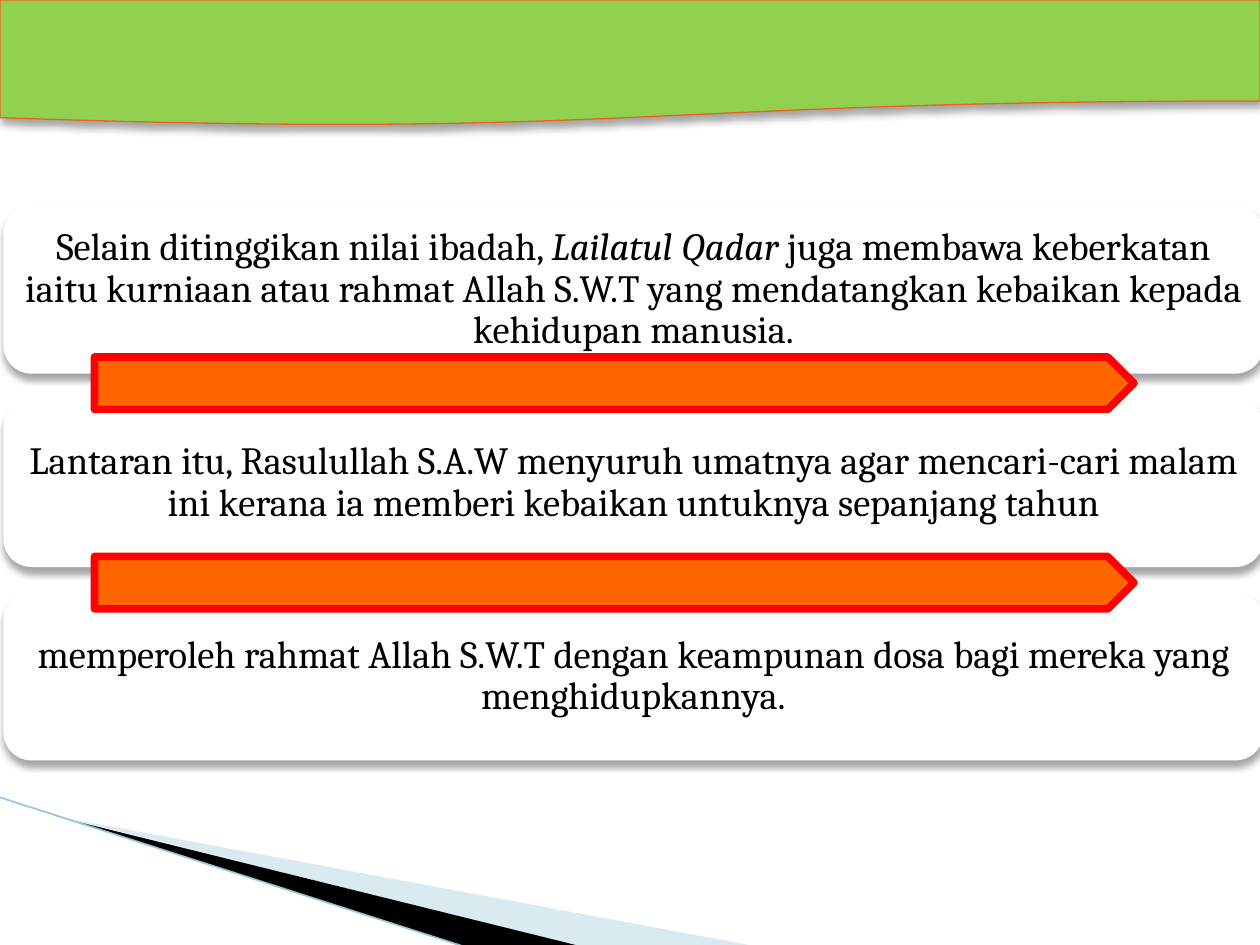
import pptx
import pptx.util
import pptx.oxml
import pptx.oxml.ns
import pptx.dml.color
import pptx.enum.shapes
import pptx.enum.text

Pt = pptx.util.Pt
RGB = pptx.dml.color.RGBColor
SHAPE = pptx.enum.shapes.MSO_SHAPE
NS = pptx.oxml.ns.nsdecls("a")

WHITE = RGB(0xFF, 0xFF, 0xFF)
BLACK = RGB(0, 0, 0)
PALE_BLUE = RGB(0xA0, 0xCB, 0xDC)
EDGE_BLUE = RGB(0x97, 0xC5, 0xD8)
GREEN = RGB(0x92, 0xD0, 0x50)
RUST = RGB(0xEB, 0x64, 0x1B)
ORANGE = RGB(0xFF, 0x66, 0x00)
RED = RGB(0xFF, 0, 0)

CARD_TOP, CARD_STEP = 117.5, 110.5
ARROW_TOPS = (204, 318)
CARDS = [
    [("Selain ditinggikan nilai ibadah, ", False), ("Lailatul Qadar", True),
     (" juga membawa keberkatan iaitu kurniaan atau rahmat Allah S.W.T yang "
      "mendatangkan kebaikan kepada kehidupan manusia.", False)],
    [("Lantaran itu, Rasulullah S.A.W menyuruh umatnya agar mencari-cari malam "
      "ini kerana ia memberi kebaikan untuknya sepanjang tahun", False)],
    [("memperoleh rahmat Allah S.W.T dengan keampunan dosa bagi mereka yang "
      "menghidupkannya.", False)],
]


class Deck:
    font, size = "Cambria", 22

    def __init__(self, width, height):
        self.prs = pptx.Presentation()
        self.prs.slide_width, self.prs.slide_height = Pt(width), Pt(height)
        self.s = self.prs.slides.add_slide(self.prs.slide_layouts[6])

    def shape(self, kind, box, fill, line=None, width=0.75, shadow=False):
        sp = self.s.shapes.add_shape(kind, *map(Pt, box))
        sp.shadow.inherit = False
        sp.fill.solid()
        sp.fill.fore_color.rgb = fill
        if line is None:
            sp.line.fill.background()
        else:
            sp.line.color.rgb = line
            sp.line.width = Pt(width)
        if shadow:
            self.drop_shadow(sp)
        return sp

    def drop_shadow(self, sp):
        effects = sp._element.spPr.find(pptx.oxml.ns.qn("a:effectLst"))
        effects.append(pptx.oxml.parse_xml(
            f'<a:outerShdw {NS} blurRad="{Pt(4)}" dist="{Pt(3)}" dir="5400000" '
            'rotWithShape="0"><a:srgbClr val="000000"><a:alpha val="35000"/>'
            '</a:srgbClr></a:outerShdw>'))

    def card(self, box, runs):
        """Draw a white rounded card; runs are (text, italic) pairs."""
        sp = self.shape(SHAPE.ROUNDED_RECTANGLE, box, WHITE, shadow=True)
        tf = sp.text_frame
        tf.word_wrap = True
        tf.vertical_anchor = pptx.enum.text.MSO_ANCHOR.MIDDLE
        tf.margin_left = tf.margin_right = Pt(6.5)
        tf.margin_top = tf.margin_bottom = Pt(6.5)
        p = tf.paragraphs[0]
        p.alignment = pptx.enum.text.PP_ALIGN.CENTER
        p.line_spacing = 0.9
        for text, italic in runs:
            r = p.add_run()
            r.text = text
            r.font.name, r.font.size = self.font, Pt(self.size)
            r.font.color.rgb = BLACK
            r.font.italic = italic

    def wedge(self, points, fill, opacity=100):
        builder = self.s.shapes.build_freeform(*points[0], scale=Pt(1))
        builder.add_line_segments(points[1:], close=True)
        sp = builder.convert_to_shape()
        sp.shadow.inherit = False
        sp.fill.solid()
        sp.fill.fore_color.rgb = fill
        sp.line.fill.background()
        if opacity < 100:
            color = sp._element.spPr.find(".//" + pptx.oxml.ns.qn("a:srgbClr"))
            color.append(pptx.oxml.parse_xml(
                f'<a:alpha {NS} val="{opacity * 1000}"/>'))

    def line(self, x1, y1, x2, y2, color, width):
        c = self.s.shapes.add_connector(
            pptx.enum.shapes.MSO_CONNECTOR.STRAIGHT, *map(Pt, (x1, y1, x2, y2)))
        c.line.color.rgb = color
        c.line.width = Pt(width)
        c._element.spPr.append(pptx.oxml.parse_xml(f"<a:effectLst {NS}/>"))


def main():
    deck = Deck(720, 540)
    deck.wedge([(39.5, 468.5), (428.5, 540.5), (328.5, 540.5), (39.5, 468)],
               PALE_BLUE, opacity=40)
    deck.wedge([(38, 467.5), (329, 540.5), (268, 541.5), (39, 468)], BLACK)
    deck.line(-0.5, 455.5, 267, 541.5, EDGE_BLUE, 0.95)

    for i, runs in enumerate(CARDS):
        deck.card((2, CARD_TOP + i * CARD_STEP, 720, 96), runs)

    deck.shape(SHAPE.FLOWCHART_DOCUMENT, (0, 0, 720, 72), GREEN, RUST, shadow=True)
    for top in ARROW_TOPS:
        deck.shape(SHAPE.PENTAGON, (54, top, 594, 30), ORANGE, RED, 4.33)

    deck.prs.save("out.pptx")


if __name__ == "__main__":
    main()
